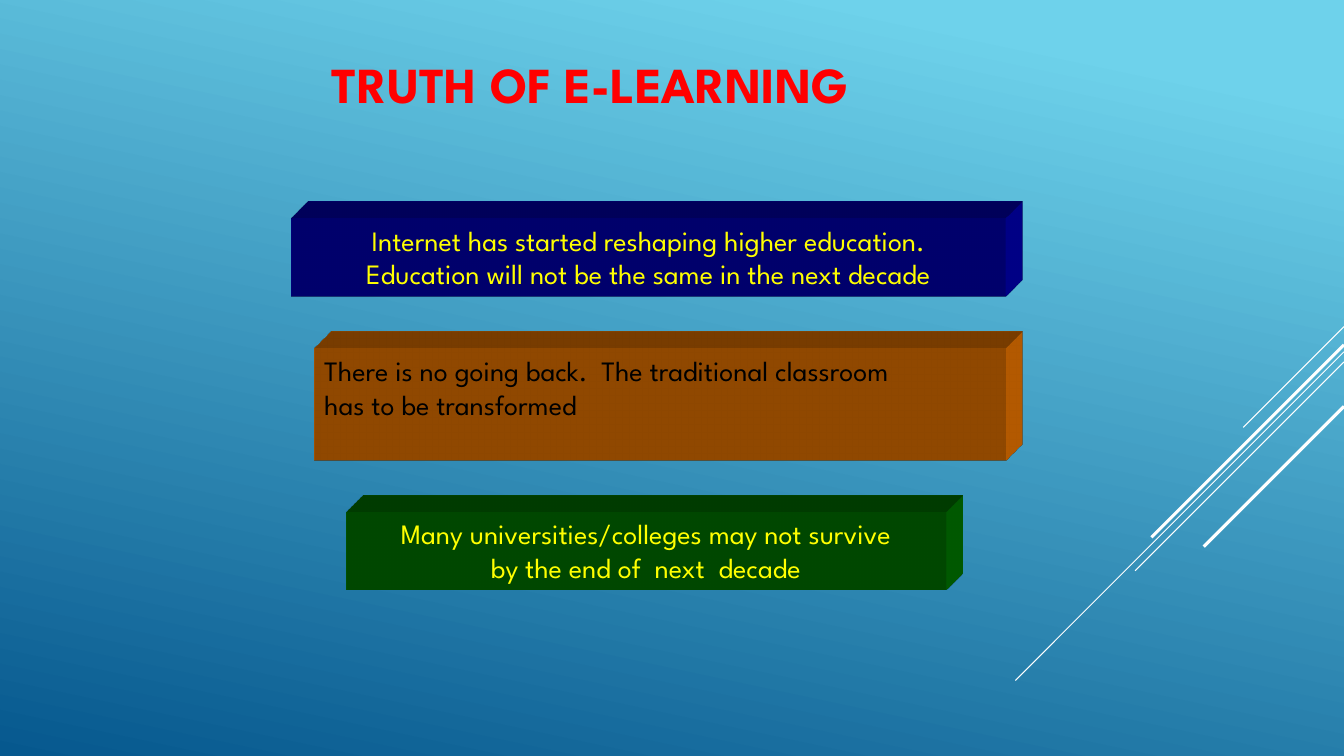
import pptx
import pptx.dml.color
import pptx.enum.shapes
import pptx.enum.text
import pptx.oxml
import pptx.oxml.ns
import pptx.util
from pptx.util import Pt

COLORS = {
    "sky": "6ED2EB", "deep": "06588E", "ray": "FFFFFF", "title": "FF0000",
    "navy": "000099", "orange": "CC6600", "green": "006600",
    "yellow": "FFFF00", "black": "000000",
}
FONT = "League Spartan"
ALIGN = pptx.enum.text.PP_ALIGN
ANCHOR = pptx.enum.text.MSO_ANCHOR
A_NS = pptx.oxml.ns.nsdecls("a")


def rgb(name):
    return pptx.dml.color.RGBColor.from_string(COLORS[name])


def place(part, box):
    part.left, part.top, part.width, part.height = map(Pt, box)


def write(frame, text, size, color, bold=False, align=ALIGN.LEFT, anchor=ANCHOR.TOP):
    frame.word_wrap = True
    frame.auto_size = pptx.enum.text.MSO_AUTO_SIZE.NONE
    frame.vertical_anchor = anchor
    frame.text = text
    for paragraph in frame.paragraphs:
        paragraph.alignment = align
        font = paragraph.font
        font.name, font.size, font.bold = FONT, Pt(size), bold
        font.color.rgb = rgb(color)


def paint_background(slide):
    fill = slide.background.fill
    fill.gradient()
    fill.gradient_angle = 258
    for stop, color, position in zip(fill.gradient_stops, ("sky", "deep"), (0.1, 1)):
        stop.color.rgb = rgb(color)
        stop.position = position


def add_rays(slide, box):
    left, top, width, height = box
    right = left + width
    rays = [(0, 72, 0.75), (18, 234.7, 0.75), (25.2, 149.2, 0.75),
            (13, 137.5, 2.25), (57, 100.2, 2.25)]
    for drop, run, weight in rays:
        start = top + drop
        ray = slide.shapes.add_connector(
            pptx.enum.shapes.MSO_CONNECTOR.STRAIGHT,
            Pt(right), Pt(start), Pt(right - run), Pt(start + run))
        ray.line.color.rgb = rgb("ray")
        ray.line.width = Pt(weight)
        ray._element.spPr.append(pptx.oxml.parse_xml(f"<a:effectLst {A_NS}/>"))


def add_title(slide, box):
    title = slide.shapes.title
    place(title, box)
    write(title.text_frame, "TRUTH OF E-LEARNING", size=36, color="title",
          bold=True, anchor=ANCHOR.MIDDLE)


def extrude(block, color):
    properties = block._element.spPr
    properties.append(pptx.oxml.parse_xml(
        f'<a:scene3d {A_NS}><a:camera prst="legacyObliqueTopRight"/>'
        '<a:lightRig rig="legacyFlat3" dir="b"/></a:scene3d>'))
    properties.append(pptx.oxml.parse_xml(
        f'<a:sp3d {A_NS} extrusionH="430200" prstMaterial="legacyMatte">'
        f'<a:extrusionClr><a:srgbClr val="{COLORS[color]}"/></a:extrusionClr></a:sp3d>'))


def add_block(slide, box, text, fill, color, align):
    block = slide.shapes.add_shape(
        pptx.enum.shapes.MSO_SHAPE.RECTANGLE, *map(Pt, box))
    block.shadow.inherit = False
    block.fill.solid()
    block.fill.fore_color.rgb = rgb(fill)
    block.line.fill.background()
    extrude(block, fill)
    write(block.text_frame, text, size=20, color=color, align=align)


def add_truths(slide, box):
    left, top, width, height = box
    truths = [
        (0, 0, width, 55.7, "navy", "yellow", ALIGN.CENTER,
         "Internet has started reshaping higher education.\n"
         "Education will not be the same in the next decade"),
        (16.5, 93, width - 16.5, 80, "orange", "black", ALIGN.LEFT,
         "There is no going back.  The traditional classroom\n"
         "has to be transformed"),
        (39.5, 209.7, 428, 55.7, "green", "yellow", ALIGN.CENTER,
         "Many universities/colleges may not survive\n"
         "by the end of  next  decade"),
    ]
    for indent, drop, wide, high, fill, color, align, text in truths:
        add_block(slide, (left + indent, top + drop, wide, high),
                  text, fill, color, align)


def main():
    deck = pptx.Presentation()
    deck.slide_width, deck.slide_height = Pt(960), Pt(540)
    slide = deck.slides.add_slide(deck.slide_layouts[5])
    paint_background(slide)
    add_rays(slide, (725, 233.3, 235, 253))
    add_title(slide, (229.7, 0, 671.8, 118.8))
    add_truths(slide, (208, 156, 510.7, 265.4))
    deck.save("out.pptx")


if __name__ == "__main__":
    main()
